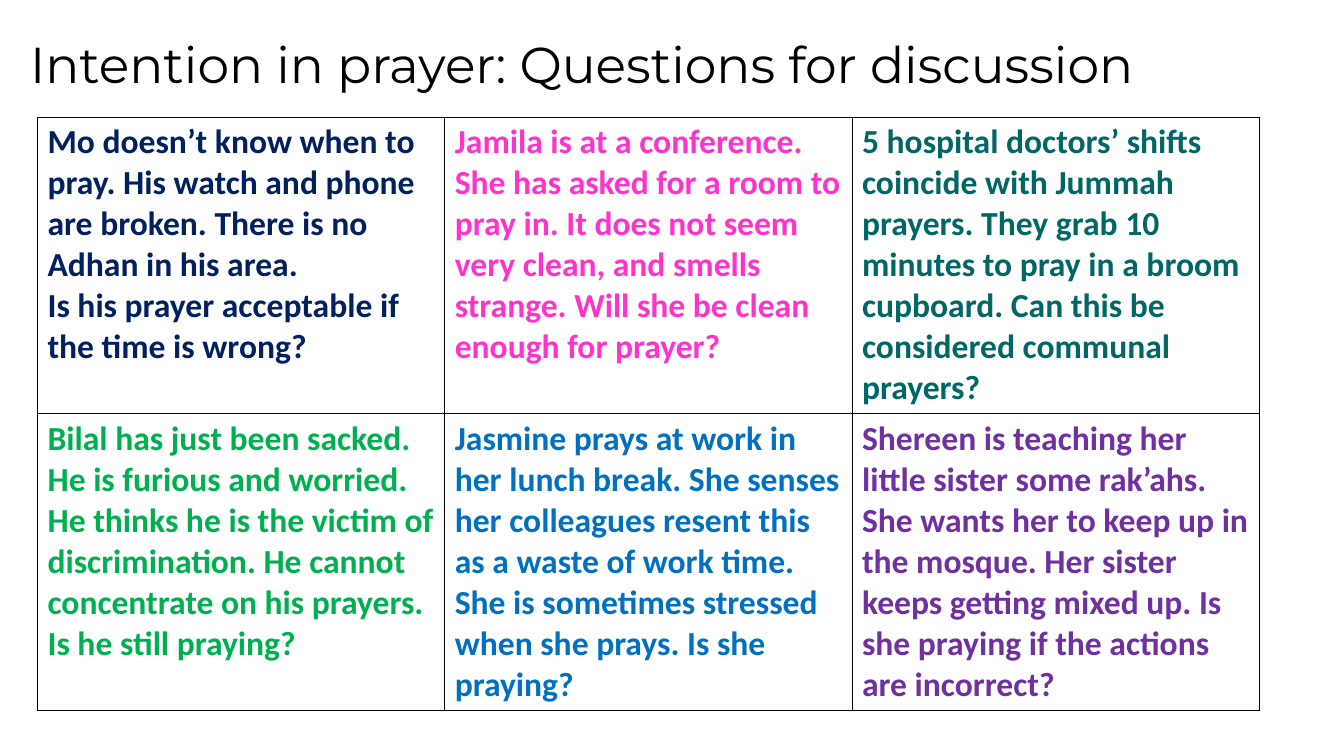
import pptx
import pptx.dml.color
import pptx.enum.text
import pptx.oxml
import pptx.oxml.ns
import pptx.util
from dataclasses import dataclass

Pt = pptx.util.Pt


@dataclass(frozen=True)
class Theme:
    title_font: str = "Montserrat"
    body_font: str = "Calibri"
    title_size: int = 36
    body_size: int = 24
    black: str = "000000"
    navy: str = "002060"
    pink: str = "FF33CC"
    teal: str = "006666"
    green: str = "00B050"
    blue: str = "0070C0"
    purple: str = "7030A0"
    border_width: float = 0.5


THEME = Theme()

# Each cell holds its colour and its paragraphs
QUESTIONS = [
    [
        (THEME.navy, [
            "Mo doesn’t know when to pray. His watch and phone are broken. "
            "There is no Adhan in his area.",
            "Is his prayer acceptable if the time is wrong?"]),
        (THEME.pink, [
            "Jamila is at a conference. She has asked for a room to pray in. "
            "It does not seem very clean, and smells strange. "
            "Will she be clean enough for prayer?"]),
        (THEME.teal, [
            "5 hospital doctors’ shifts coincide with Jummah prayers. "
            "They grab 10 minutes to pray in a broom cupboard. "
            "Can this be considered communal prayers?"]),
    ],
    [
        (THEME.green, [
            "Bilal has just been sacked. He is furious and worried. "
            "He thinks he is the victim of discrimination. "
            "He cannot concentrate on his prayers. Is he still praying?"]),
        (THEME.blue, [
            "Jasmine prays at work in her lunch break. "
            "She senses her colleagues resent this as a waste of work time. "
            "She is sometimes stressed when she prays. Is she praying?"]),
        (THEME.purple, [
            "Shereen is teaching her little sister some rak’ahs. "
            "She wants her to keep up in the mosque. "
            "Her sister keeps getting mixed up. "
            "Is she praying if the actions are incorrect?"]),
    ],
]


def write_text(para, text, *, font, size, color, bold=False):
    span = para.add_run()
    span.text = text
    span.font.name = font
    span.font.size = Pt(size)
    span.font.bold = bold
    span.font.color.rgb = pptx.dml.color.RGBColor.from_string(color)


def add_title(page, text, left, top, width, height):
    box = page.shapes.add_textbox(Pt(left), Pt(top), Pt(width), Pt(height))
    frame = box.text_frame
    frame.word_wrap = True
    frame.vertical_anchor = pptx.enum.text.MSO_ANCHOR.MIDDLE
    para = frame.paragraphs[0]
    para.line_spacing = 0.9
    write_text(para, text, font=THEME.title_font, size=THEME.title_size,
               color=THEME.black)


def outline_cell(cell):
    properties = cell._tc.get_or_add_tcPr()
    for side in ("lnL", "lnR", "lnT", "lnB"):
        properties.append(pptx.oxml.parse_xml(
            f'<a:{side} {pptx.oxml.ns.nsdecls("a")} w="{Pt(THEME.border_width)}">'
            f'<a:solidFill><a:srgbClr val="{THEME.black}"/></a:solidFill>'
            f'</a:{side}>'))


def fill_cell(cell, color, texts):
    outline_cell(cell)
    cell.fill.background()
    frame = cell.text_frame
    for index, text in enumerate(texts):
        para = frame.add_paragraph() if index else frame.paragraphs[0]
        write_text(para, text, font=THEME.body_font, size=THEME.body_size,
                   color=color, bold=True)


def add_question_table(page, rows, left, top, column_width, row_height):
    columns = len(rows[0])
    table = page.shapes.add_table(
        len(rows), columns, Pt(left), Pt(top),
        Pt(column_width * columns), Pt(row_height * len(rows))).table
    table.first_row = False
    table.horz_banding = False
    for row_index, row in enumerate(rows):
        for column_index, (color, texts) in enumerate(row):
            fill_cell(table.cell(row_index, column_index), color, texts)


def main():
    deck = pptx.Presentation()
    deck.slide_width, deck.slide_height = Pt(960), Pt(540)
    page = deck.slides.add_slide(deck.slide_layouts[6])

    # Heading
    add_title(page, "Intention in prayer: Questions for discussion",
              left=14.4, top=2, width=945.6, height=91.4)

    # Discussion questions
    add_question_table(page, QUESTIONS, left=26.8, top=83.5,
                       column_width=290.9, row_height=212)

    deck.save("out.pptx")


if __name__ == "__main__":
    main()
